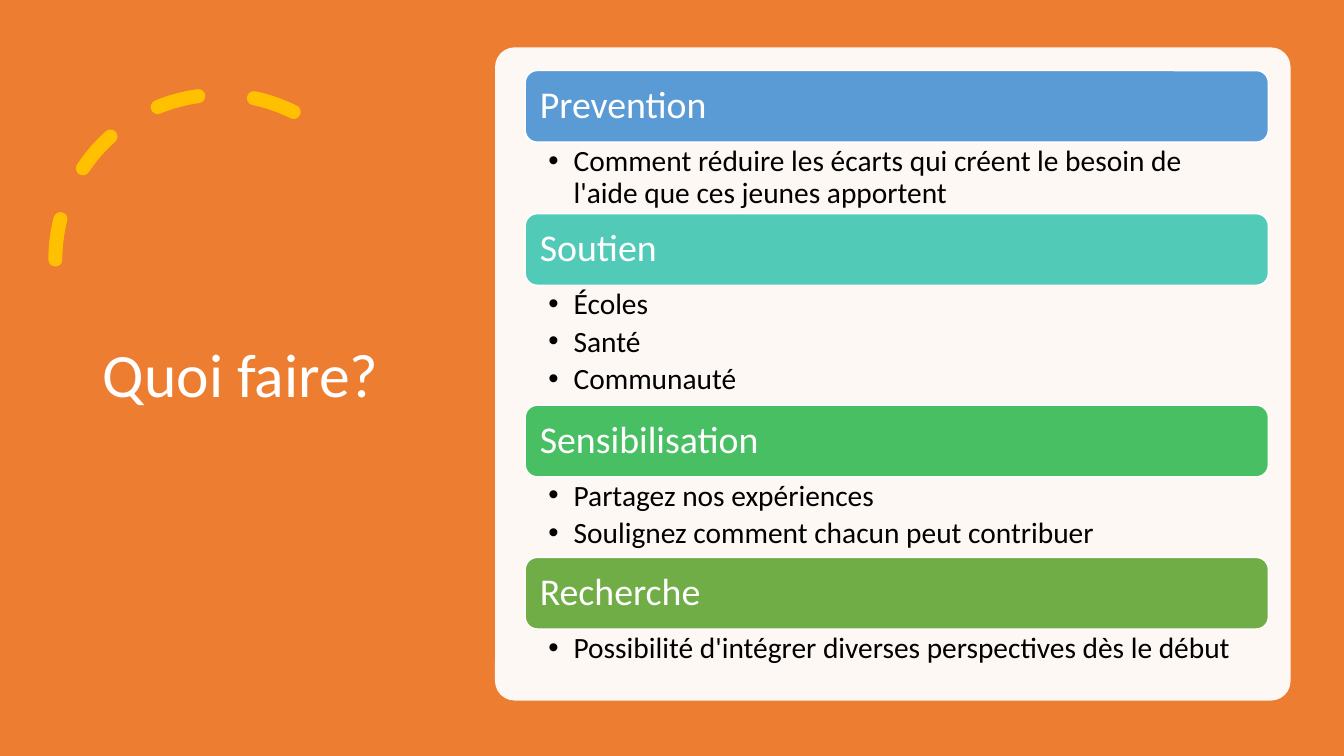
from lxml import etree
from pptx import Presentation
from pptx.dml.color import RGBColor
from pptx.enum import dml, shapes, text
from pptx.oxml import ns
from pptx.util import Inches, Pt

ORANGE = RGBColor(0xED, 0x7D, 0x31)
YELLOW = RGBColor(0xFF, 0xC0, 0x00)
WHITE = RGBColor(0xFF, 0xFF, 0xFF)
BLACK = RGBColor(0x00, 0x00, 0x00)
BLUE = RGBColor(0x5B, 0x9B, 0xD5)
TEAL = RGBColor(0x52, 0xCA, 0xB8)
GREEN = RGBColor(0x49, 0xBF, 0x64)
OLIVE = RGBColor(0x70, 0xAD, 0x47)

# Heading, colour, height of the list below, list items
SECTIONS = [
    ("Prevention", BLUE, 0.71,
     ["Comment réduire les écarts qui créent le besoin de l'aide que ces jeunes apportent"]),
    ("Soutien", TEAL, 1.19, ["Écoles", "Santé", "Communauté"]),
    ("Sensibilisation", GREEN, 0.8,
     ["Partagez nos expériences", "Soulignez comment chacun peut contribuer"]),
    ("Recherche", OLIVE, 0.49,
     ["Possibilité d'intégrer diverses perspectives dès le début"]),
]
LIST_LEFT, LIST_WIDTH, BAR_HEIGHT = 5.21, 7.37, 0.71


def write(box, lines, size, color, anchor, insets=(0.1, 0.05, 0.1, 0.05), after=0, bullet=False):
    frame = box.text_frame
    frame.word_wrap = True
    frame.auto_size = text.MSO_AUTO_SIZE.NONE
    frame.vertical_anchor = anchor
    frame.margin_left, frame.margin_top, frame.margin_right, frame.margin_bottom = map(Inches, insets)
    for number, line in enumerate(lines):
        para = frame.add_paragraph() if number else frame.paragraphs[0]
        para.alignment = text.PP_ALIGN.LEFT
        para.line_spacing = 0.9
        para.space_after = Pt(after)
        span = para.add_run()
        span.text = line
        span.font.name = "Calibri"
        span.font.size = Pt(size)
        span.font.color.rgb = color
        if bullet:
            props = para._p.get_or_add_pPr()
            props.set("marL", str(Inches(0.25)))
            props.set("indent", str(Inches(-0.25)))
            etree.SubElement(props, ns.qn("a:buFont")).set("typeface", "Arial")
            etree.SubElement(props, ns.qn("a:buChar")).set("char", "•")


def add_block(page, kind, left, top, width, height, fill):
    block = page.shapes.add_shape(kind, Inches(left), Inches(top), Inches(width), Inches(height))
    block.shadow.inherit = False
    block.fill.solid()
    block.fill.fore_color.rgb = fill
    block.line.fill.background()
    return block


deck = Presentation()
deck.slide_width, deck.slide_height = Inches(13.33), Inches(7.5)
page = deck.slides.add_slide(deck.slide_layouts[5])
title = page.shapes.title

# Orange backdrop, placed behind the title
backdrop = add_block(page, shapes.MSO_SHAPE.RECTANGLE, 0, 0, 13.33, 7.5, ORANGE)
title.element.addprevious(backdrop.element)

# Dashed arc, mirrored, behind the title
arc = page.shapes.add_shape(shapes.MSO_SHAPE.ARC, Inches(0.55), Inches(0.94), Inches(3.27), Inches(3.27))
arc.shadow.inherit = False
arc.adjustments[0], arc.adjustments[1] = 146.13, 0
arc.element.spPr.find(ns.qn("a:xfrm")).set("flipH", "1")
arc.fill.background()
arc.line.color.rgb = YELLOW
arc.line.width = Pt(10)
arc.line.dash_style = dml.MSO_LINE.DASH
arc.element.spPr.find(ns.qn("a:ln")).set("cap", "rnd")
title.element.addprevious(arc.element)

# Title
title.left, title.top, title.width, title.height = map(Inches, (0.92, 0.7, 3.23, 6.09))
write(title, ["Quoi faire?"], 44, WHITE, text.MSO_ANCHOR.MIDDLE)

# Pale panel, 95 % opaque
panel = add_block(page, shapes.MSO_SHAPE.ROUNDED_RECTANGLE, 4.91, 0.47, 7.89, 6.48, WHITE)
panel.adjustments[0] = 0.03
panel_color = panel.element.spPr.find(ns.qn("a:solidFill"))[0]
etree.SubElement(panel_color, ns.qn("a:alpha")).set("val", "95000")

# Heading bars, each followed by its list
top = 0.7
for heading, color, list_height, items in SECTIONS:
    bar = add_block(page, shapes.MSO_SHAPE.ROUNDED_RECTANGLE, LIST_LEFT, top, LIST_WIDTH, BAR_HEIGHT, color)
    bar.line.color.rgb = WHITE
    bar.line.width = Pt(1)
    write(bar, [heading], 27, WHITE, text.MSO_ANCHOR.MIDDLE, insets=(0.11, 0.11, 0.11, 0.11))
    top += BAR_HEIGHT
    box = page.shapes.add_textbox(Inches(LIST_LEFT), Inches(top), Inches(LIST_WIDTH), Inches(list_height))
    write(box, items, 21, BLACK, text.MSO_ANCHOR.TOP, insets=(0.23, 0.04, 0.21, 0.04), after=4, bullet=True)
    top += list_height

deck.save("out.pptx")
